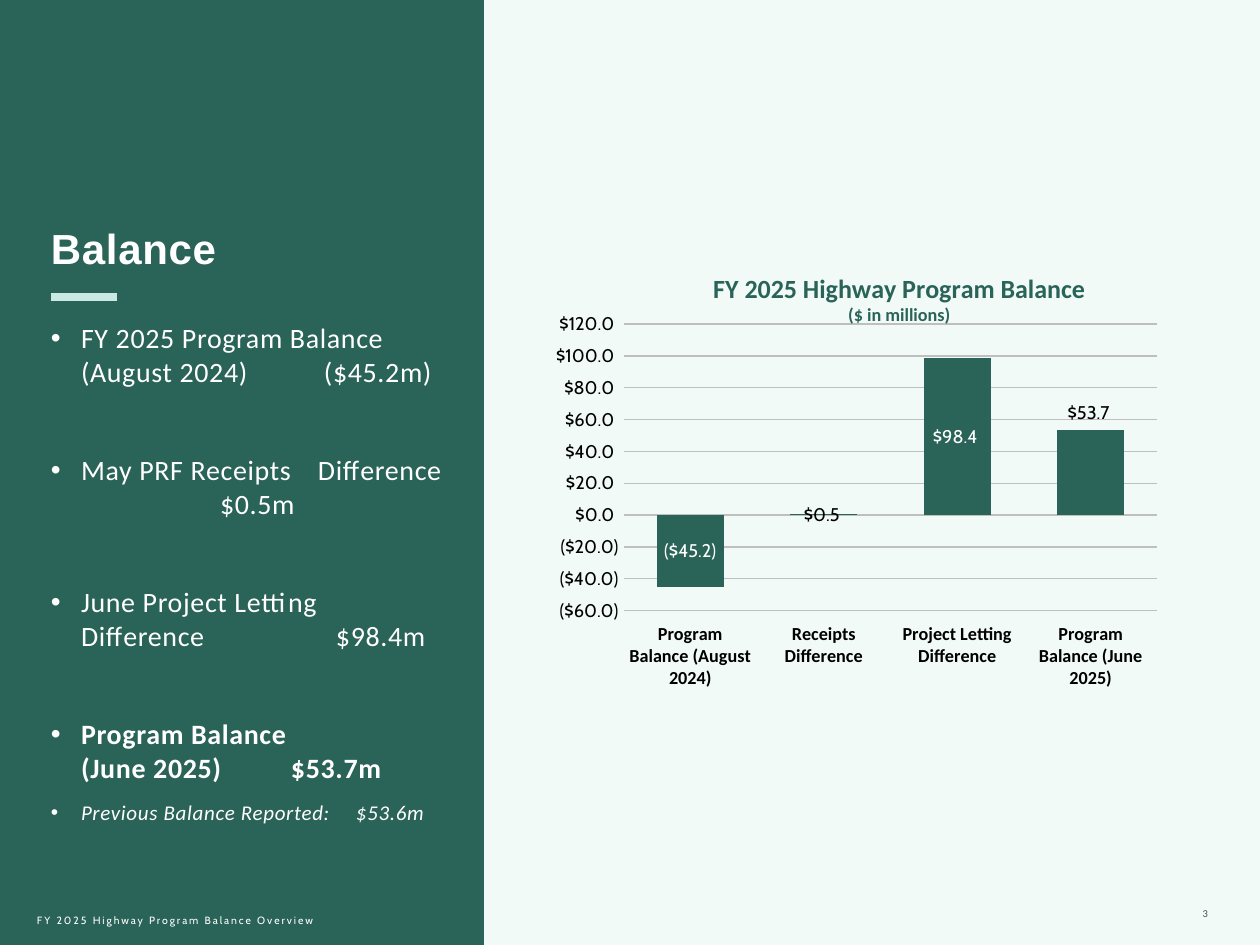
from lxml.etree import SubElement
from pptx import Presentation
from pptx.chart.data import CategoryChartData
from pptx.dml.color import RGBColor
from pptx.enum.chart import XL_CHART_TYPE, XL_LABEL_POSITION, XL_TICK_LABEL_POSITION, XL_TICK_MARK
from pptx.enum.shapes import MSO_CONNECTOR, MSO_SHAPE
from pptx.enum.text import MSO_ANCHOR, MSO_AUTO_SIZE, PP_ALIGN
from pptx.oxml import parse_xml
from pptx.oxml.ns import nsdecls, qn
from pptx.util import Emu, Pt

PX = 914400 // 126
GREEN, MINT, PALE, WHITE, BLACK = "2A6357", "CBE9E3", "F2FAF8", "FFFFFF", "000000"
GRID, GRAY = "BFBFBF", "4D4D4F"
MONEY = '"$"#,##0.0_);\\("$"#,##0.0\\)'

# lines, tab stops in px from the text's left edge, size, bold, italic, space before
BULLETS = [
    (["FY 2025 Program Balance", "(August 2024)\t($45.2m)"], [273], 16, False, False, 0),
    (["May PRF Receipts\tDifference", "\t$0.5m"], [169, 267], 16, False, False, 37),
    (["June Project Letting", "Difference\t$98.4m"], [285], 16, False, False, 37),
    (["Program Balance", "(June 2025)\t$53.7m"], [240], 16, True, False, 37),
    (["Previous Balance Reported:\t$53.6m"], [305], 12, False, True, 9),
]
BALANCES = [
    ("Program Balance (August 2024)", -45.2),
    ("Receipts Difference", 0.5),
    ("Project Letting Difference", 98.4),
    ("Program Balance (June 2025)", 53.7),
]
DARK_LABELS = {1: XL_LABEL_POSITION.CENTER, 3: XL_LABEL_POSITION.OUTSIDE_END}
CHART_TITLE = [("FY 2025 Highway Program Balance", 15), ("($ in millions)", 10.5)]
INDENT = 30


def px(*lengths):
    return [Emu(length * PX) for length in lengths]


def color(hex_string):
    return RGBColor.from_string(hex_string)


def style(font, face, size, hex_string, bold=False, italic=False):
    font.name, font.size, font.bold, font.italic = face, Pt(size), bold, italic
    font.color.rgb = color(hex_string)


def add_run(paragraph, text, spacing, *font_style):
    """Spacing is the letter spacing in hundredths of a point."""
    run = paragraph.add_run()
    run.text = text
    style(run.font, *font_style)
    run.font._element.set("spc", str(spacing))


def place(shape, left, top, width, height, anchor=MSO_ANCHOR.TOP, inset=0):
    shape.left, shape.top, shape.width, shape.height = px(left, top, width, height)
    frame = shape.text_frame
    frame.word_wrap = True
    frame.auto_size = MSO_AUTO_SIZE.NONE
    frame.vertical_anchor = anchor
    frame.margin_left = frame.margin_right = 0
    frame.margin_top = frame.margin_bottom = Emu(inset * PX)
    return frame.paragraphs[0]


def set_bullet(paragraph, tab_stops):
    properties = paragraph._p.get_or_add_pPr()
    indent = INDENT * PX
    properties.set("marL", str(indent))
    properties.set("indent", str(-indent))
    SubElement(properties, qn("a:buFont"), typeface="Arial")
    SubElement(properties, qn("a:buChar"), char="•")
    tabs = SubElement(properties, qn("a:tabLst"))
    for stop in tab_stops:
        SubElement(tabs, qn("a:tab"), pos=str(stop * PX), algn="l")


def set_layout(parent, position, **fractions):
    """Put a manual chart layout at the given child position."""
    layout = parse_xml(f"<c:layout {nsdecls('c')}><c:manualLayout/></c:layout>")
    for tag, value in fractions.items():
        SubElement(layout[0], qn(f"c:{tag}"), val=str(value))
    for old in parent.findall(qn("c:layout")):
        parent.remove(old)
    parent.insert(position, layout)


def add_balance_chart(slide):
    data = CategoryChartData(number_format=MONEY)
    data.categories = [name for name, _ in BALANCES]
    data.add_series("Series 1", [value for _, value in BALANCES])
    chart = slide.shapes.add_chart(
        XL_CHART_TYPE.COLUMN_CLUSTERED, *px(556, 258, 620, 441), data).chart
    style(chart.font, "Cabin", 10, BLACK)
    chart.has_legend = False

    title = chart.chart_title.text_frame
    for index, (text, size) in enumerate(CHART_TITLE):
        paragraph = title.add_paragraph() if index else title.paragraphs[0]
        add_run(paragraph, text, 0, "Calibri", size, GREEN, True)
    set_layout(chart.chart_title._element, 1, xMode="edge", yMode="edge", x=0.24, y=0.02)
    set_layout(chart._chartSpace.chart.plotArea, 0, layoutTarget="inner",
               xMode="edge", yMode="edge", x=0.1, y=0.15, w=0.87, h=0.65)

    categories, values = chart.category_axis, chart.value_axis
    for axis, face, bold in ((categories, "Calibri", True), (values, "Cabin", False)):
        style(axis.tick_labels.font, face, 10.5, BLACK, bold)
        axis.major_tick_mark = axis.minor_tick_mark = XL_TICK_MARK.NONE
    categories.tick_label_position = XL_TICK_LABEL_POSITION.LOW
    values.minimum_scale, values.maximum_scale, values.major_unit = -60, 120, 20
    values.tick_labels.number_format = MONEY
    values.tick_labels.number_format_is_linked = False
    values.format.line.fill.background()
    for line in (categories.format.line, values.major_gridlines.format.line):
        line.color.rgb = color(GRID)
        line.width = Pt(0.75)

    plot = chart.plots[0]
    plot.gap_width, plot.overlap, plot.vary_by_categories = 100, -24, False
    series = plot.series[0]
    series.invert_if_negative = False
    series.format.fill.solid()
    series.format.fill.fore_color.rgb = color(GREEN)
    labels = series.data_labels
    labels.show_value = True
    labels.number_format, labels.number_format_is_linked = MONEY, False
    labels.position = XL_LABEL_POSITION.CENTER
    style(labels.font, "Cabin", 10.5, WHITE)
    for index, position in DARK_LABELS.items():
        label = series.points[index].data_label
        style(label.font, "Cabin", 10.5, BLACK)
        label.position = position


def main():
    presentation = Presentation()
    presentation.slide_width, presentation.slide_height = px(1260, 945)
    slide = presentation.slides.add_slide(presentation.slide_layouts[1])
    slide.background.fill.solid()
    slide.background.fill.fore_color.rgb = color(PALE)
    shapes = slide.shapes

    panel = shapes.add_shape(MSO_SHAPE.RECTANGLE, *px(0, 0, 484, 945))
    panel.shadow.inherit = False
    panel.fill.solid()
    panel.fill.fore_color.rgb = color(GREEN)
    panel.line.fill.background()
    shapes._spTree.insert(2, panel._element)  # behind the placeholders

    heading = place(shapes.title, 51, 222, 393, 60)
    heading.alignment = PP_ALIGN.LEFT
    add_run(heading, "Balance", 40, "Arial", 24, WHITE, True)

    rule = shapes.add_connector(MSO_CONNECTOR.STRAIGHT, *px(51, 297, 117, 297))
    rule.line.color.rgb = color(MINT)
    rule.line.width = Pt(4.5)
    SubElement(rule._element.spPr, qn("a:effectLst"))

    body = slide.placeholders[1]
    paragraph = place(body, 51, 321, 393, 510)
    for index, (lines, stops, size, bold, italic, before) in enumerate(BULLETS):
        if index:
            paragraph = body.text_frame.add_paragraph()
        set_bullet(paragraph, stops)
        paragraph.space_before = Pt(before)
        for number, line in enumerate(lines):
            if number:
                paragraph.add_line_break()
            add_run(paragraph, line, 40, "Calibri", size, WHITE, bold, italic)

    add_balance_chart(slide)

    footer = place(shapes.add_textbox(0, 0, 0, 0), 37, 901, 329, 38, MSO_ANCHOR.MIDDLE, 6)
    add_run(footer, "FY 2025 Highway Program Balance Overview", 110, "Cabin", 6, WHITE)
    page = place(shapes.add_textbox(0, 0, 0, 0), 1086, 876, 122, 50, MSO_ANCHOR.BOTTOM, 6)
    page.alignment = PP_ALIGN.RIGHT
    add_run(page, "3", 110, "Calibri", 6, GRAY)

    presentation.save("out.pptx")


if __name__ == "__main__":
    main()
